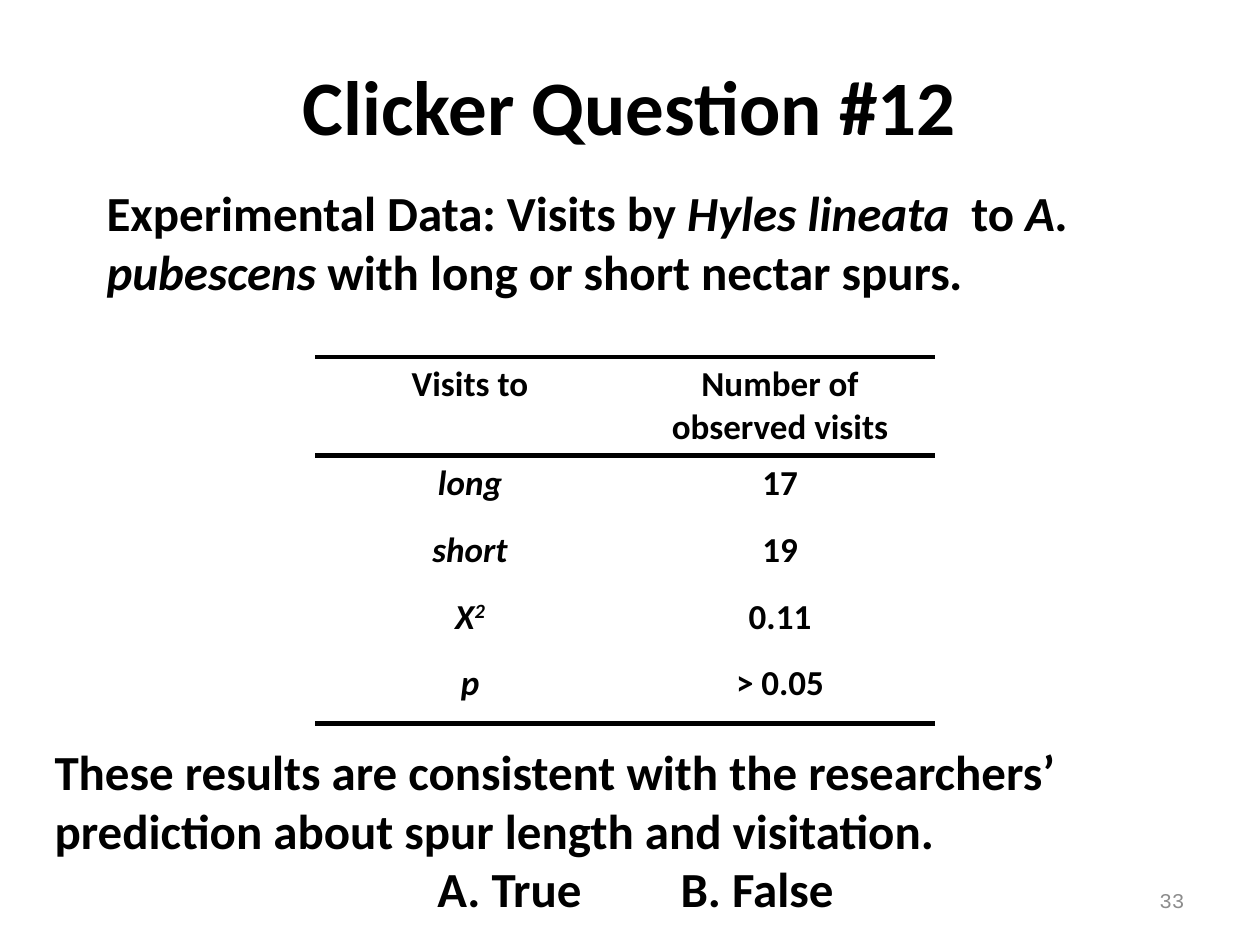
from lxml import etree
from pptx import Presentation
from pptx.dml import color
from pptx.enum import text
from pptx.oxml import ns
from pptx.util import Cm, Pt

BLACK = color.RGBColor(0x00, 0x00, 0x00)
GRAY = color.RGBColor(0x8C, 0x8C, 0x8C)
LEFT, CENTER, RIGHT = text.PP_ALIGN.LEFT, text.PP_ALIGN.CENTER, text.PP_ALIGN.RIGHT
TOP, MIDDLE = text.MSO_ANCHOR.TOP, text.MSO_ANCHOR.MIDDLE


def add_run(p, txt, size=28, bold=True, italic=False, font="Calibri", rgb=BLACK, base=0, align=LEFT):
    p.alignment = align
    r = p.add_run()
    r.text = txt
    r.font.size = Pt(size)
    r.font.bold = bold
    r.font.italic = italic
    r.font.name = font
    r.font.color.rgb = rgb
    if base:
        r.font._element.set("baseline", str(base * 1000))


def add_box(s, left, top, width, height, anchor=MIDDLE):
    tf = s.shapes.add_textbox(Cm(left), Cm(top), Cm(width), Cm(height)).text_frame
    tf.word_wrap = True
    tf.vertical_anchor = anchor
    return tf


prs = Presentation()
prs.slide_width, prs.slide_height = Cm(25.4), Cm(19.05)
s = prs.slides.add_slide(prs.slide_layouts[6])

tf = add_box(s, 0.85, 14.82, 23.92, 3.84, TOP)
add_run(tf.paragraphs[0], "These results are consistent with the researchers’ prediction about spur length and visitation.")
p = tf.add_paragraph()
add_run(p, "\tA. True\tB. False")
tabs = etree.SubElement(p._p.get_or_add_pPr(), ns.qn("a:tabLst"))
for pos in (7.72, 12.62):
    etree.SubElement(tabs, ns.qn("a:tab"), pos=str(Cm(pos)), algn="l")

tf = add_box(s, 0, 0, 25.4, 4.23)
add_run(tf.paragraphs[0], "Clicker Question #12", size=44, align=CENTER)

rows = [
    ("Visits to", "Number of observed visits"),
    ("long", "17"),
    ("short", "19"),
    ("Χ", "0.11"),
    ("p", "> 0.05"),
]
last = len(rows) - 1
table = s.shapes.add_table(len(rows), 2, Cm(6.35), Cm(7.2), Cm(12.5), Cm(7.38)).table
table.first_row = table.horz_banding = False
for col in table.columns:
    col.width = Cm(6.25)
for i, row in enumerate(rows):
    table.rows[i].height = Cm(1.98 if i == 0 else 1.35)
    for j, txt in enumerate(row):
        cell = table.cell(i, j)
        p = cell.text_frame.paragraphs[0]
        italic = i > 0 and j == 0
        add_run(p, txt, size=20, italic=italic, align=CENTER)
        if txt == "Χ":
            add_run(p, "2", size=20, italic=True, base=30, align=CENTER)
        tcPr = cell._tc.get_or_add_tcPr()
        ruled = {"a:lnL": False, "a:lnR": False, "a:lnT": i in (0, 1), "a:lnB": i in (0, last)}
        for side, shown in ruled.items():
            ln = etree.SubElement(tcPr, ns.qn(side), w=str(Pt(3)))
            if shown:
                fill = etree.SubElement(ln, ns.qn("a:solidFill"))
                etree.SubElement(fill, ns.qn("a:srgbClr"), val=str(BLACK))
            else:
                etree.SubElement(ln, ns.qn("a:noFill"))
        cell.fill.background()

tf = add_box(s, 1.9, 2.75, 20.75, 4.23)
p = tf.paragraphs[0]
for txt, italic in (
    ("Experimental Data: Visits by ", False),
    ("Hyles lineata", True),
    ("  to ", False),
    ("A. pubescens ", True),
    ("with long or short nectar spurs", False),
    (".", True),
):
    add_run(p, txt, italic=italic)

tf = add_box(s, 18.2, 17.65, 5.93, 1.01)
add_run(tf.paragraphs[0], "33", size=12, bold=False, font="Courier New", rgb=GRAY, align=RIGHT)

prs.save("out.pptx")
